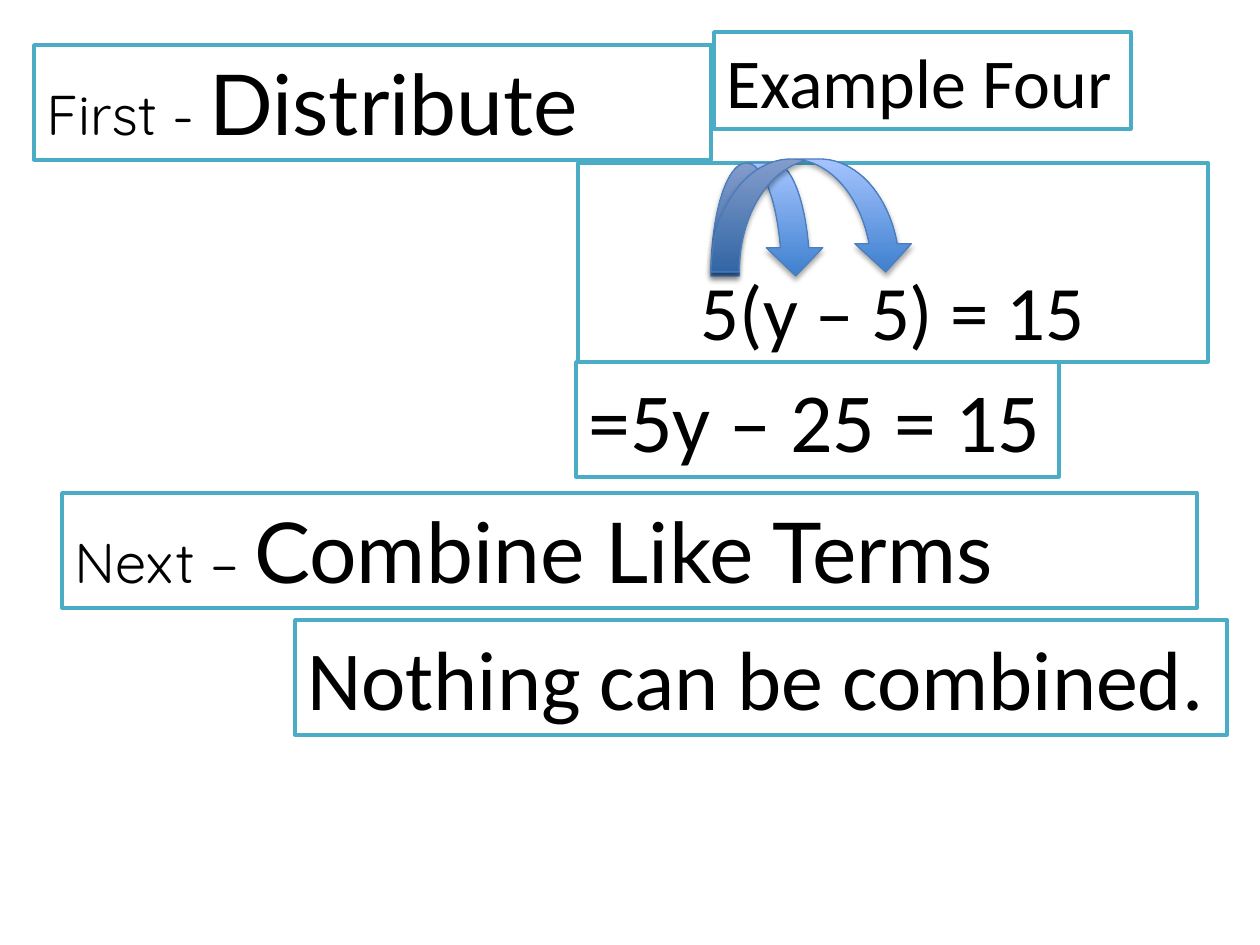
from lxml import etree
from pptx import Presentation
from pptx import util as u
from pptx.dml.color import RGBColor
from pptx.enum import shapes, text
from pptx.oxml.ns import qn

PX = 914400 / 126


def px(n):
    return u.Emu(round(n * PX))


def rgb(code):
    return RGBColor.from_string(code)


class Deck:
    ink, paper, edge = "000000", "FFFFFF", "4BACC6"
    low, high, rim = "3F80CE", "A4C4FF", "4B7EBC"

    def __init__(self, wide, high):
        self.prs = Presentation()
        self.prs.slide_width, self.prs.slide_height = px(wide), px(high)
        self.slide = self.prs.slides.add_slide(self.prs.slide_layouts[6])

    def shape(self, kind, at, line, width):
        item = self.slide.shapes.add_shape(kind, *map(px, at))
        item.shadow.inherit = False
        item.line.color.rgb = rgb(line)
        item.line.width = u.Pt(width)
        return item

    def box(self, at, *runs, align=text.PP_ALIGN.LEFT, anchor=text.MSO_ANCHOR.TOP):
        """Each run is (words, size, font)."""
        item = self.shape(shapes.MSO_SHAPE.RECTANGLE, at, self.edge, 2)
        item.fill.solid()
        item.fill.fore_color.rgb = rgb(self.paper)
        frame = item.text_frame
        frame.word_wrap = True
        frame.vertical_anchor = anchor
        para = frame.paragraphs[0]
        para.alignment = align
        para.font.color.rgb = rgb(self.ink)
        for words, size, name in runs:
            run = para.add_run()
            run.text = words
            font = para.font if len(runs) == 1 else run.font
            font.size, font.name = u.Pt(size), name
            run.font.color.rgb = rgb(self.ink)

    def arc(self, at):
        item = self.shape(shapes.MSO_SHAPE.CURVED_DOWN_ARROW, at, self.rim, 0.75)
        item.fill.gradient()
        item.fill.gradient_angle = 90
        for stop, code in zip(item.fill.gradient_stops, (self.low, self.high)):
            stop.color.rgb = rgb(code)
        # Soft shadow straight below
        effects = item._element.spPr.find(qn("a:effectLst"))
        shade = etree.SubElement(effects, qn("a:outerShdw"), blurRad=str(u.Pt(3.1)),
                                 dist=str(u.Pt(1.8)), dir="5400000", rotWithShape="0")
        tint = etree.SubElement(shade, qn("a:srgbClr"), val=self.ink)
        etree.SubElement(tint, qn("a:alpha"), val="35000")


def main():
    deck = Deck(1260, 945)

    # First step: distribute
    deck.box((34, 45, 677, 115), ("First - ", 32, "Quicksand"), ("Distribute", 48, "Lato"))
    deck.box((576, 362, 483, 115), ("=5y – 25 = 15", 48, "Calibri"))
    deck.box((578, 163, 630, 199), ("5(y – 5) = 15", 44, "Calibri"),
             align=text.PP_ALIGN.CENTER, anchor=text.MSO_ANCHOR.BOTTOM)

    # Arrows from the factor to each term
    for top, wide in ((163, 113), (159, 203)):
        deck.arc((711, top, wide, 113))

    # Next step: combine
    deck.box((62, 493, 1135, 115), ("Next – ", 32, "Quicksand"),
             ("Combine Like Terms", 48, "Lato"))
    deck.box((295, 620, 932, 115), ("Nothing can be combined.", 48, "Calibri"))

    # Title
    deck.box((714, 32, 417, 97), ("Example Four", 40, "Calibri"))

    deck.prs.save("out.pptx")


if __name__ == "__main__":
    main()
